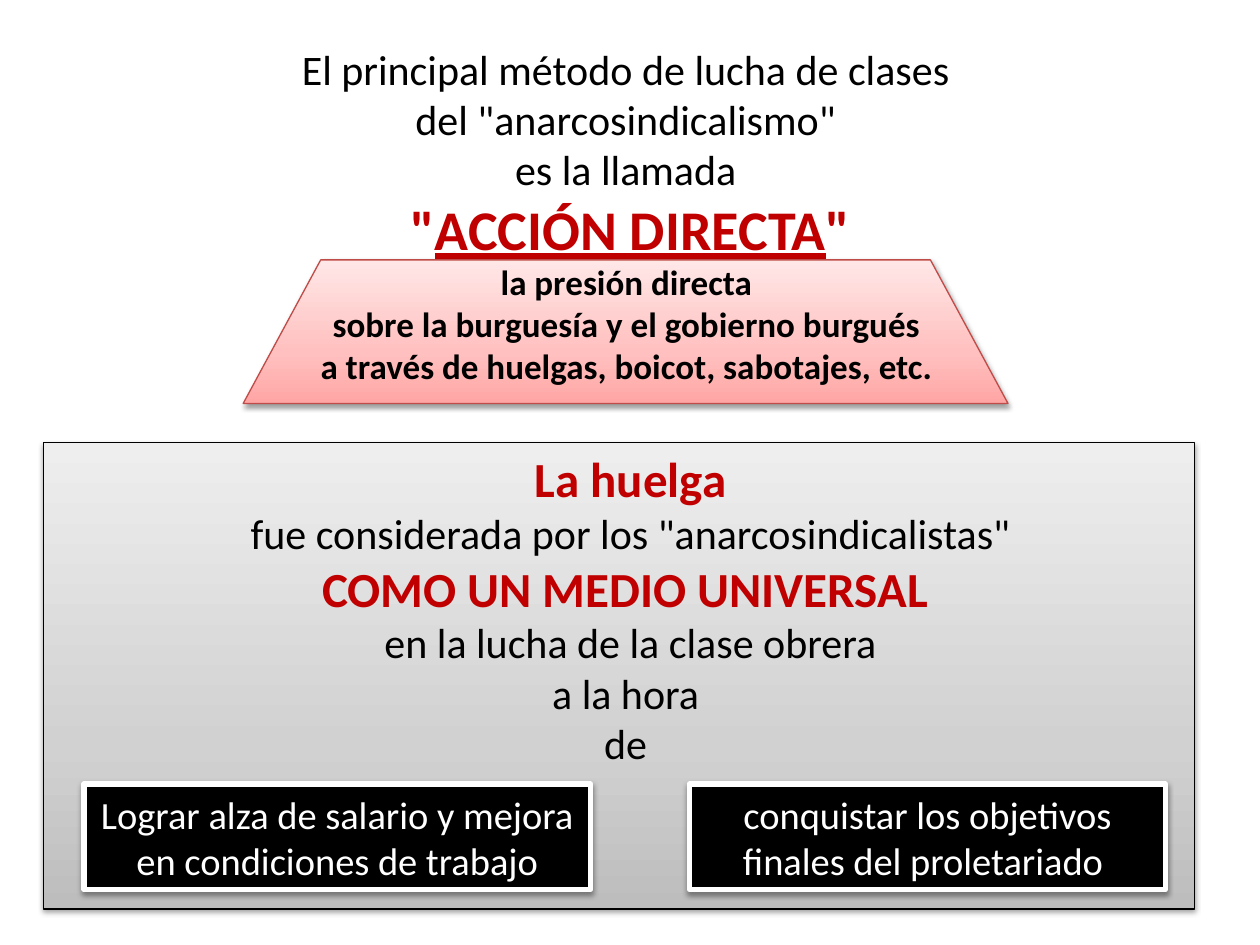
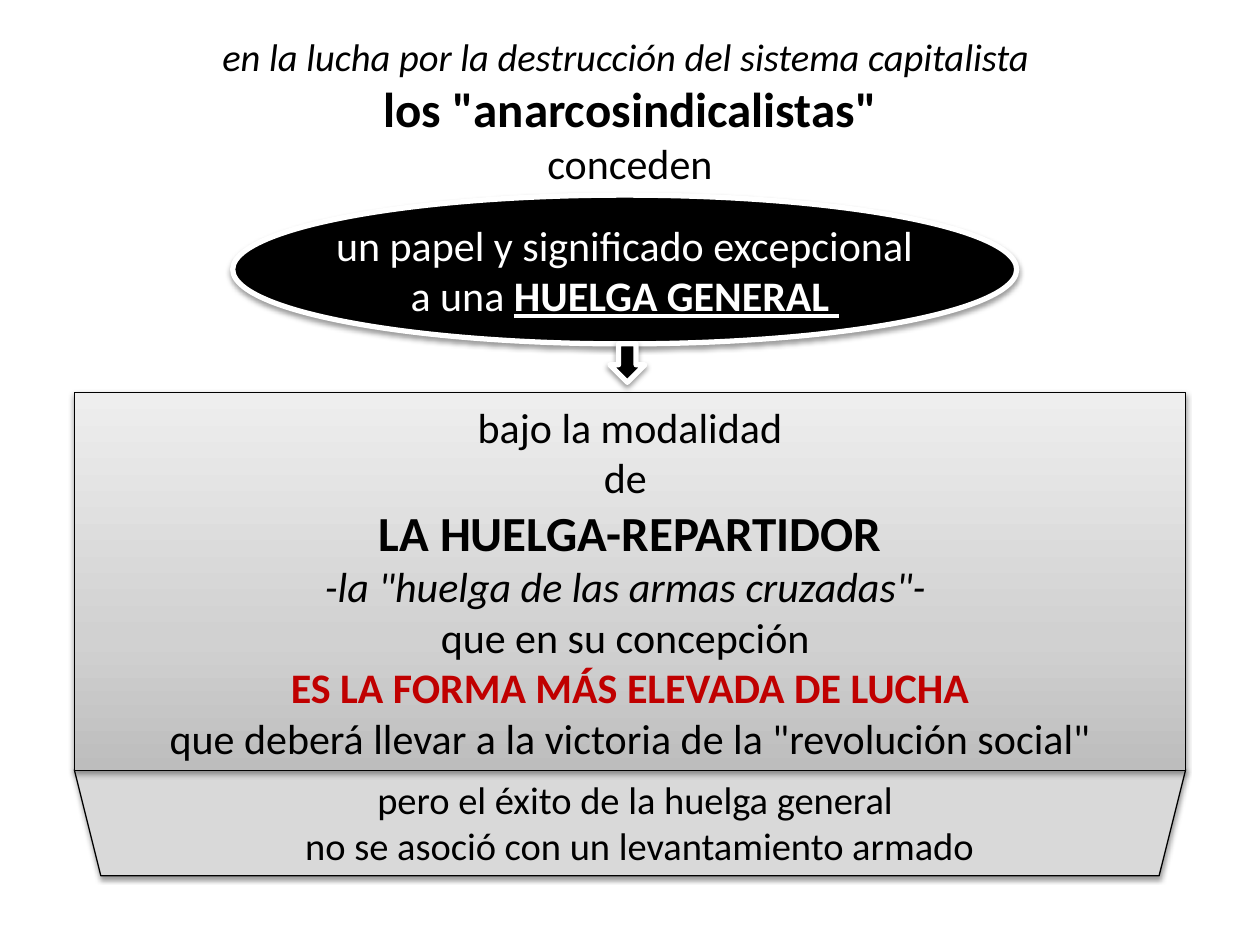
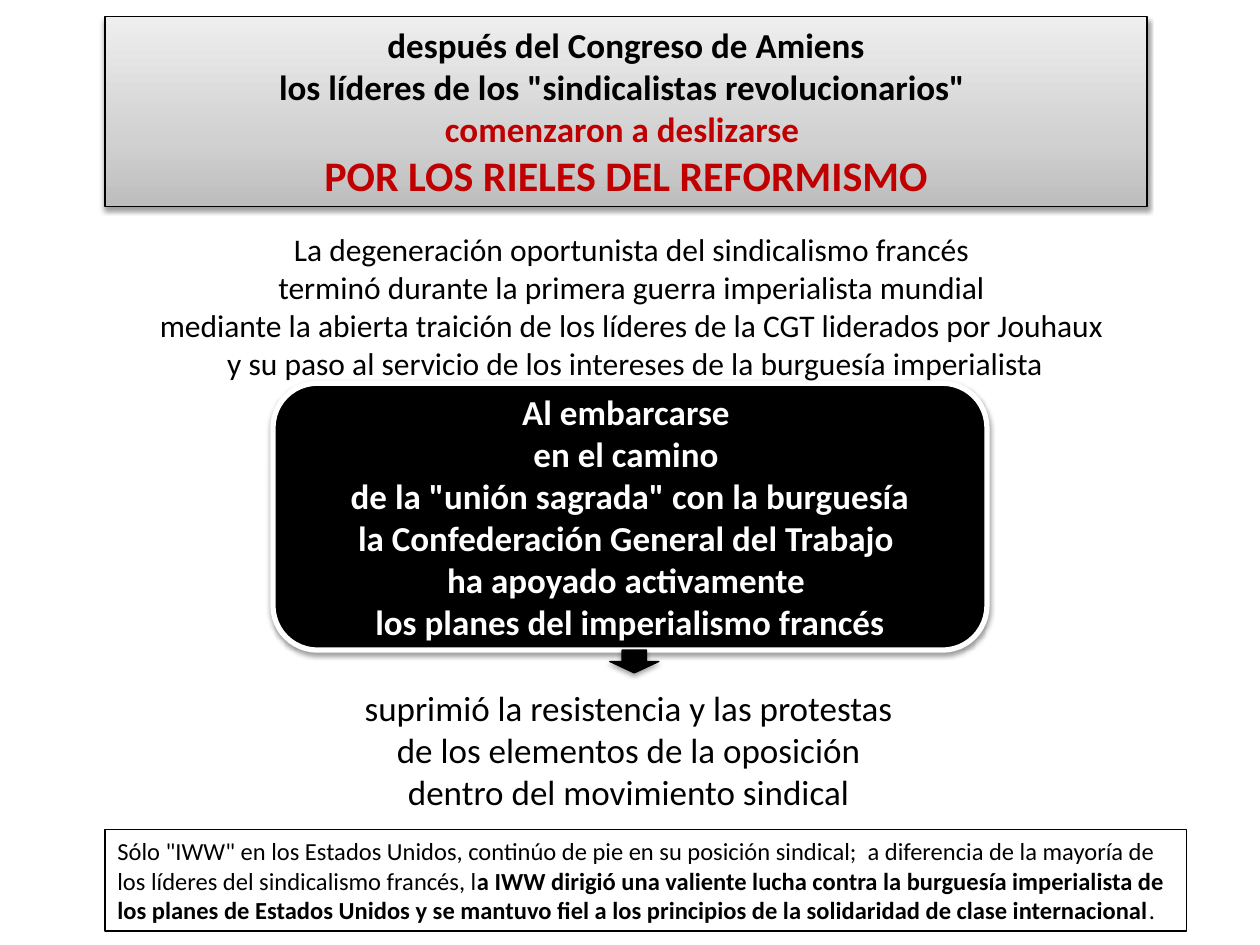
from copy import deepcopy

from pptx import Presentation
from pptx.dml.color import RGBColor
from pptx.enum.shapes import MSO_SHAPE as SHAPE
from pptx.enum.text import MSO_ANCHOR as ANCHOR, MSO_AUTO_SIZE as AUTO_SIZE, PP_ALIGN as ALIGN
from pptx.oxml import parse_xml
from pptx.oxml.ns import nsdecls, qn
from pptx.util import Pt

FONT = "Calibri"
BLACK, WHITE, RED = "000000", "FFFFFF", "C00000"

# Looks: fill (a colour or gradient stops), line colour, line width, shadow
GRAY_PANEL = ([(0, "BDBDBD"), (0.35, "D1D1D1"), (1, "EEEEEE")], BLACK, 0.75, True)
PINK_PANEL = ([(0, "FFA6A5"), (0.35, "FFC0BF"), (1, "FFE7E7")], "BF4C48", 0.75, True)
FLAT_PANEL = ("D9D9D9", BLACK, 0.75, True)
BLACK_PANEL = (BLACK, WHITE, 3, True)
BLACK_ARROW = (BLACK, BLACK, 0.75, True)
OUTLINE = (None, BLACK, 0.75, False)

# Lines: (size, style, text or runs). Styles: b bold, i italic, u underlined, r red, w white
SLIDES = [
    {
        "title": {"box": (37, 21, 646.5, 133), "lines": [
            (24, "", "El principal método de lucha de clases "),
            (24, "", 'del "anarcosindicalismo" '),
            (24, "", "es la llamada "),
            (32, "br", [("", '"'), ("u", "ACCIÓN DIRECTA"), ("", '"')]),
        ]},
        "parts": [
            {"shape": SHAPE.RECTANGLE, "box": (25, 253, 657.5, 266.5), "look": GRAY_PANEL},
            {"shape": SHAPE.TRAPEZOID, "box": (139, 148.5, 437, 82), "look": PINK_PANEL,
             "adjustment": 0.54},
            {"box": (37, 253, 646.5, 191.5), "lines": [
                (28, "br", "La huelga"),
                (24, "", ' fue considerada por los "anarcosindicalistas" '),
                (28, "br", "COMO UN MEDIO UNIVERSAL "),
                (24, "", "en la lucha de la clase obrera"),
                (24, "", "a la hora "),
                (24, "", "de "),
            ]},
            {"box": (37, 145.5, 646.5, 80), "lines": [
                (20, "b", "la presión directa "),
                (20, "b", "sobre la burguesía y el gobierno burgués "),
                (20, "b", "a través de huelgas, boicot, sabotajes, etc. "),
            ]},
            {"shape": SHAPE.RECTANGLE, "box": (48, 448, 289.5, 60.5), "look": BLACK_PANEL,
             "lines": [(22, "w", "Lograr alza de salario y mejora en condiciones de trabajo")]},
            {"shape": SHAPE.RECTANGLE, "box": (394, 448, 272, 60.5), "look": BLACK_PANEL,
             "lines": [(22, "w", "conquistar los objetivos finales del proletariado ")]},
        ],
    },
    {
        "title": {"box": (42.5, 15, 635, 98), "lines": [
            (22, "i", "en la lucha por la destrucción del sistema capitalista "),
            (28, "b", 'los "anarcosindicalistas"'),
            (24, "", "conceden"),
        ]},
        "parts": [
            {"shape": SHAPE.TRAPEZOID, "box": (42.5, 440, 635, 60.5), "look": FLAT_PANEL,
             "flipped": True},
            {"shape": SHAPE.OVAL, "box": (133, 111.5, 448, 85), "look": BLACK_PANEL,
             "wrap": False, "lines": [
                 (24, "w", "un papel y significado excepcional"),
                 (24, "w", [("", "a una "), ("bu", "HUELGA GENERAL"), ("u", " ")]),
             ]},
            {"shape": SHAPE.RECTANGLE, "box": (42.5, 224.5, 635, 216), "look": GRAY_PANEL,
             "lines": [
                 (24, "", "bajo la modalidad"),
                 (24, "", "de "),
                 (28, "b", "LA HUELGA-REPARTIDOR"),
                 (24, "i", '-la "huelga de las armas cruzadas"- '),
                 (24, "", "que en su concepción "),
                 (24, "br", "ES LA FORMA MÁS ELEVADA DE LUCHA"),
                 (24, "", ' que deberá llevar a la victoria de la "revolución social" '),
             ]},
            {"box": (48, 440, 635, 60.5), "lines": [
                (22, "", "pero el éxito de la huelga general "),
                (22, "", "no se asoció con un levantamiento armado"),
            ]},
            {"shape": SHAPE.DOWN_ARROW, "box": (348.5, 196.5, 20, 22), "look": BLACK_PANEL},
        ],
    },
    {
        "title": {"box": (60, 9.5, 595.5, 108.5), "look": GRAY_PANEL, "lines": [
            (20, "b", "después del Congreso de Amiens"),
            (20, "b", 'los líderes de los "sindicalistas revolucionarios" '),
            (20, "br", "comenzaron a deslizarse "),
            (24, "br", "POR LOS RIELES DEL REFORMISMO"),
        ]},
        "parts": [
            {"shape": SHAPE.ROUNDED_RECTANGLE, "box": (156, 219, 408, 152.5),
             "look": BLACK_PANEL, "lines": [
                 (20, "bw", "Al embarcarse "),
                 (20, "bw", "en el camino "),
                 (20, "bw", 'de la "unión sagrada" con la burguesía'),
                 (20, "bw", "la Confederación General del Trabajo "),
                 (20, "bw", "ha apoyado activamente "),
                 (20, "bw", "los planes del imperialismo francés"),
             ]},
            {"box": (42.5, 128, 641, 94), "lines": [
                (18, "", "La degeneración oportunista del sindicalismo francés "),
                (18, "", "terminó durante la primera guerra imperialista mundial "),
                (18, "", "mediante la abierta traición de los líderes de la CGT "
                         "liderados por Jouhaux "),
                (18, "", "y su paso al servicio de los intereses de la burguesía imperialista"),
            ]},
            {"box": (170.5, 389, 382, 80), "lines": [
                (20, "", "suprimió la resistencia y las protestas "),
                (20, "", "de los elementos de la oposición "),
                (20, "", "dentro del movimiento sindical "),
            ]},
            {"shape": SHAPE.DOWN_ARROW, "box": (348.5, 371.5, 28, 13), "look": BLACK_ARROW},
            {"shape": SHAPE.RECTANGLE, "box": (60, 474, 618, 58), "look": OUTLINE,
             "align": ALIGN.LEFT, "lines": [(14, "", [
                 ("", 'Sólo "IWW" en los Estados Unidos, continúo de pie en su posición sindical;  '
                      "a diferencia de la mayoría de los líderes del sindicalismo francés, l"),
                 ("b", "a IWW dirigió una valiente lucha contra la burguesía imperialista de los "
                       "planes de Estados Unidos y se mantuvo fiel a los principios de la "
                       "solidaridad de clase internacional"),
                 ("", "."),
             ])]},
        ],
    },
]


def color(hex_string):
    return RGBColor.from_string(hex_string)


def fill_gradient(shape, stops):
    """Fill from bottom to top with any number of (position, colour) stops."""
    shape.fill.gradient()
    shape.fill.gradient_angle = 90
    stop_list = shape._element.spPr.find(qn("a:gradFill")).find(qn("a:gsLst"))
    while len(stop_list) < len(stops):
        stop_list.append(deepcopy(stop_list[0]))
    for stop, (position, hex_string) in zip(shape.fill.gradient_stops, stops):
        stop.position = position
        stop.color.rgb = color(hex_string)


def add_shadow(shape):
    shape.shadow.inherit = False
    effects = shape._element.spPr.find(qn("a:effectLst"))
    effects.append(parse_xml(
        f'<a:outerShdw {nsdecls("a")} blurRad="{Pt(3.1)}" dist="{Pt(1.6)}" dir="5400000" '
        'rotWithShape="0"><a:srgbClr val="000000"><a:alpha val="38000"/></a:srgbClr>'
        '</a:outerShdw>'))


def apply_look(shape, look):
    fill, line_color, line_width, has_shadow = look
    if fill is None:
        shape.fill.background()
    elif isinstance(fill, str):
        shape.fill.solid()
        shape.fill.fore_color.rgb = color(fill)
    else:
        fill_gradient(shape, fill)
    shape.line.color.rgb = color(line_color)
    shape.line.width = Pt(line_width)
    if has_shadow:
        add_shadow(shape)
    else:
        shape.shadow.inherit = False


def write_lines(shape, part, anchor):
    frame = shape.text_frame
    frame.auto_size = AUTO_SIZE.NONE
    frame.word_wrap = part.get("wrap", True)
    frame.vertical_anchor = anchor
    for index, (size, style, text) in enumerate(part["lines"]):
        paragraph = frame.paragraphs[0] if index == 0 else frame.add_paragraph()
        paragraph.alignment = part.get("align", ALIGN.CENTER)
        font = paragraph.font
        font.name, font.size = FONT, Pt(size)
        font.bold, font.italic = "b" in style, "i" in style
        font.color.rgb = color(RED if "r" in style else WHITE if "w" in style else BLACK)
        for run_style, run_text in [("", text)] if isinstance(text, str) else text:
            run = paragraph.add_run()
            run.text = run_text
            if "b" in run_style:
                run.font.bold = True
            if "u" in run_style:
                run.font.underline = True


def place_title(slide, part):
    title = slide.shapes.title
    title.left, title.top, title.width, title.height = map(Pt, part["box"])
    if "look" in part:
        apply_look(title, part["look"])
    write_lines(title, part, ANCHOR.MIDDLE if "look" in part else ANCHOR.TOP)


def add_part(slide, part):
    box = map(Pt, part["box"])
    if "shape" not in part:
        write_lines(slide.shapes.add_textbox(*box), part, ANCHOR.TOP)
        return
    shape = slide.shapes.add_shape(part["shape"], *box)
    apply_look(shape, part["look"])
    if "adjustment" in part:
        shape.adjustments[0] = part["adjustment"]
    if part.get("flipped"):
        shape._element.spPr.find(qn("a:xfrm")).set("flipV", "1")
    if "lines" in part:
        write_lines(shape, part, ANCHOR.MIDDLE)


def main():
    presentation = Presentation()
    presentation.slide_width, presentation.slide_height = Pt(720), Pt(540)
    title_only = presentation.slide_layouts[5]
    for content in SLIDES:
        slide = presentation.slides.add_slide(title_only)
        place_title(slide, content["title"])
        for part in content["parts"]:
            add_part(slide, part)
    presentation.save("out.pptx")


if __name__ == "__main__":
    main()
